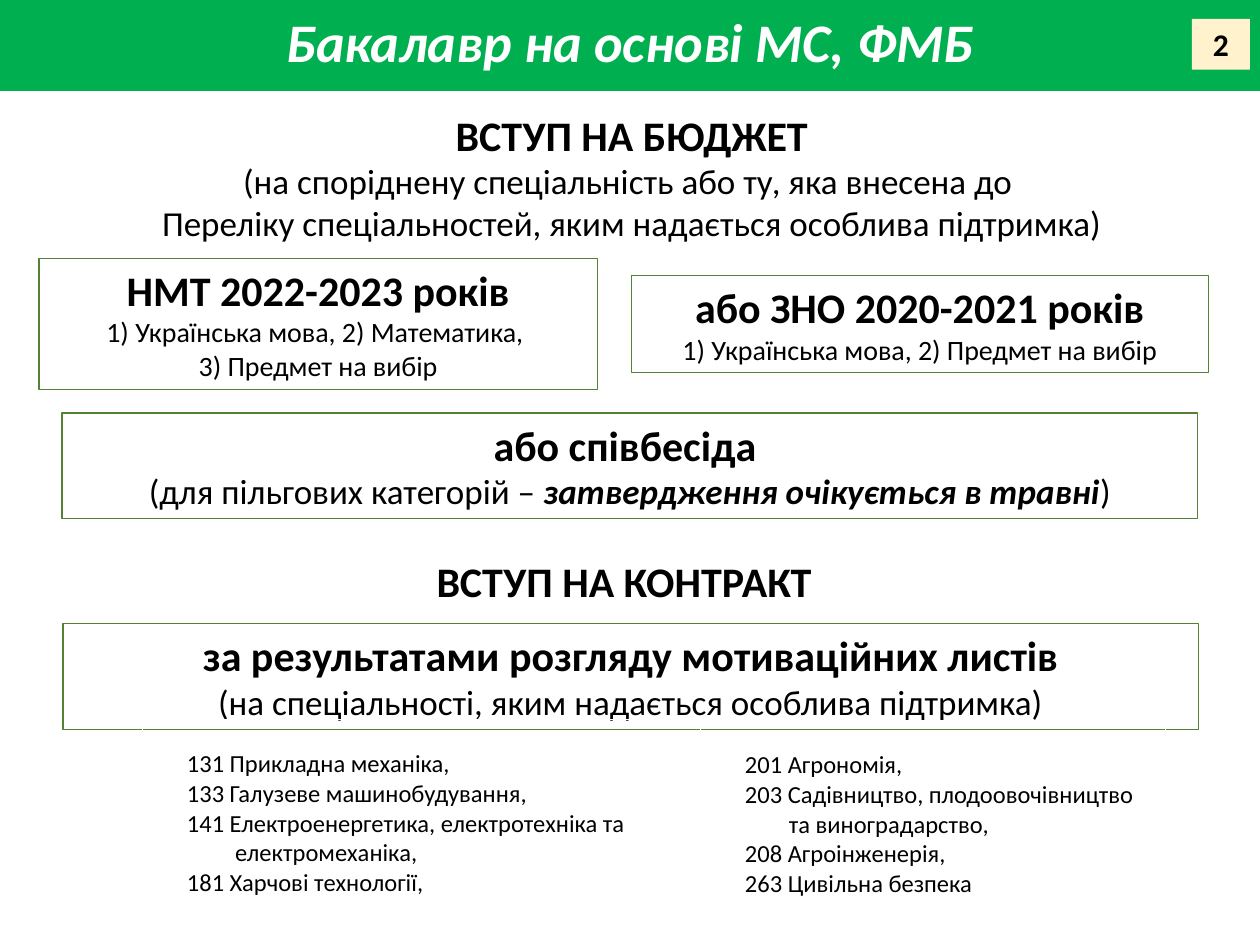
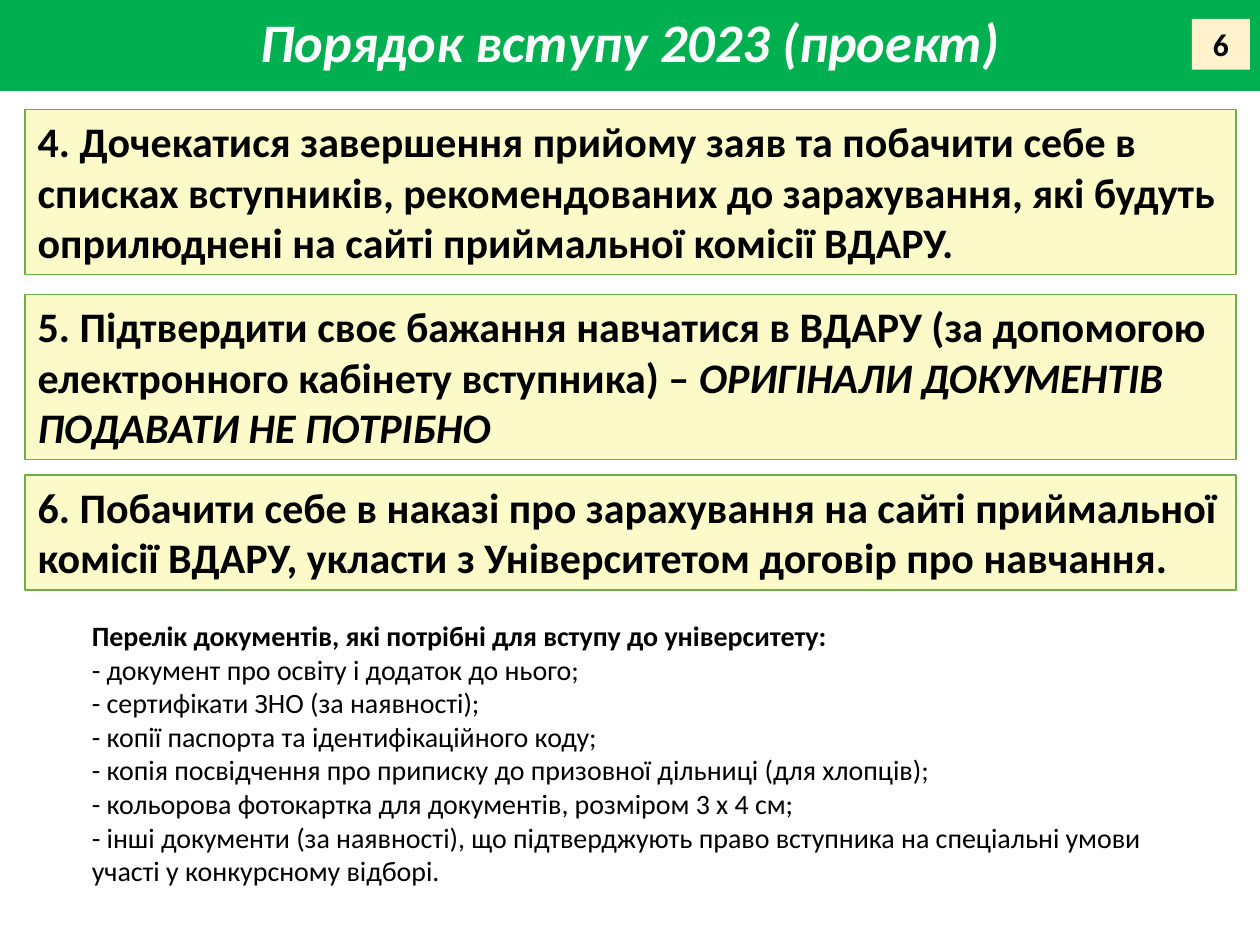
from collections import namedtuple

from lxml import etree
from pptx import Presentation
from pptx.dml.color import RGBColor
from pptx.enum.shapes import MSO_SHAPE as Shape
from pptx.enum.text import MSO_ANCHOR as Anchor, MSO_AUTO_SIZE as AutoSize, PP_ALIGN as Align
from pptx.oxml.ns import qn
from pptx.util import Pt

FONT = "Calibri"
GREEN = RGBColor(0x00, 0xB0, 0x50)
DARK_GREEN = RGBColor(0x54, 0x82, 0x35)
LEAF_GREEN = RGBColor(0x70, 0xAD, 0x47)
CREAM = RGBColor(0xFF, 0xF2, 0xCC)
PALE_YELLOW = RGBColor(0xFB, 0xFA, 0xC8)
WHITE = RGBColor(0xFF, 0xFF, 0xFF)
BLACK = RGBColor(0x00, 0x00, 0x00)

Box = namedtuple("Box", "left top width height")
TITLE_BAND = Box(0, -0.5, 720, 52.5)
NUMBER_BADGE = Box(681.1, 10.8, 33.1, 29)

LIST_SIZE = 14
LIST_LINE = 17
LIST_INDENT = 20.4


def write(para, text, size=24, bold=False, italic=False, color=BLACK):
    """Append one formatted span to a paragraph."""
    span = para.add_run()
    span.text = text
    font = span.font
    font.name, font.size = FONT, Pt(size)
    font.bold, font.italic = bold, italic
    font.color.rgb = color


def add_box(page, box, lines, align=Align.CENTER, fill=None, line=None, line_width=0.75):
    """Place a text box; each line is a list of (text, format) spans."""
    place = [Pt(length) for length in box]
    if fill is None and line is None:
        shape = page.shapes.add_textbox(*place)
    else:
        shape = page.shapes.add_shape(Shape.RECTANGLE, *place)
        shape.shadow.inherit = False
        if fill is None:
            shape.fill.background()
        else:
            shape.fill.solid()
            shape.fill.fore_color.rgb = fill
        if line is None:
            shape.line.fill.background()
        else:
            shape.line.color.rgb = line
            shape.line.width = Pt(line_width)
    frame = shape.text_frame
    frame.word_wrap = True
    frame.auto_size = AutoSize.SHAPE_TO_FIT_TEXT
    frame.vertical_anchor = Anchor.TOP
    for index, spans in enumerate(lines):
        para = frame.add_paragraph() if index else frame.paragraphs[0]
        para.alignment = align
        for text, style in spans:
            write(para, text, **style)


def headed(heading, *details, size=20):
    """Lines with a bold heading and plain details below it."""
    return [[(heading, dict(bold=True))]] + [[(text, dict(size=size))] for text in details]


def add_page(deck, title, number):
    page = deck.slides.add_slide(deck.slide_layouts[5])
    band = page.shapes.title
    band.left, band.top, band.width, band.height = (Pt(length) for length in TITLE_BAND)
    band.fill.solid()
    band.fill.fore_color.rgb = GREEN
    frame = band.text_frame
    frame.word_wrap = True
    frame.auto_size = AutoSize.NONE
    frame.vertical_anchor = Anchor.MIDDLE
    frame.margin_left = frame.margin_right = frame.margin_top = frame.margin_bottom = Pt(9.4)
    para = frame.paragraphs[0]
    para.alignment = Align.CENTER
    para.line_spacing = 0.9
    write(para, title, size=31, bold=True, italic=True, color=WHITE)
    add_box(page, NUMBER_BADGE, [[(number, dict(size=18, bold=True))]], fill=CREAM)
    return page


def add_specialities(page, left, top, width, rows, wrap_indent):
    """One-column table; a line starting in lower case continues the one above."""
    height = LIST_LINE * sum(max(len(row), 1) for row in rows)
    table = page.shapes.add_table(
        len(rows), 1, Pt(left), Pt(top), Pt(width), Pt(height)).table
    table.first_row = table.horz_banding = False
    for index, row in enumerate(rows):
        table.rows[index].height = Pt(LIST_LINE * max(len(row), 1))
        cell = table.cell(index, 0)
        cell.fill.background()
        cell.margin_left = cell.margin_right = Pt(5)
        cell.margin_top = cell.margin_bottom = 0
        frame = cell.text_frame
        if not row:
            etree.SubElement(frame.paragraphs[0]._p, qn("a:endParaRPr"), sz=str(LIST_SIZE * 100))
        for position, text in enumerate(row):
            para = frame.add_paragraph() if position else frame.paragraphs[0]
            indent = wrap_indent if text[0].islower() else LIST_INDENT
            para._p.get_or_add_pPr().set("indent", str(Pt(indent)))
            write(para, text, size=LIST_SIZE)


def add_bachelor_page(deck):
    page = add_page(deck, "Бакалавр на основі МС, ФМБ", "2")
    add_box(page, Box(22.3, 59, 677.5, 85), headed(
        "ВСТУП НА БЮДЖЕТ",
        "(на споріднену спеціальність або ту, яка внесена до ",
        "Переліку спеціальностей, яким надається особлива підтримка)"))
    interview = headed("або співбесіда ") + [[
        ("(для пільгових категорій – ", dict(size=20)),
        ("затвердження очікується в травні", dict(size=20, bold=True, italic=True)),
        (")", dict(size=20))]]
    outlined = [
        (Box(22.3, 147.6, 319, 75), headed(
            "НМТ 2022-2023 років", "1) Українська мова, 2) Математика, ",
            "3) Предмет на вибір", size=16)),
        (Box(360.7, 157.5, 329.8, 55.5), headed(
            "або ЗНО 2020-2021 років", "1) Українська мова, 2) Предмет на вибір", size=16)),
        (Box(35.5, 236, 648.7, 60.5), interview),
        (Box(36, 356.4, 648.7, 60.5), headed(
            "за результатами розгляду мотиваційних листів",
            "(на спеціальності, яким надається особлива підтримка)")),
    ]
    for box, lines in outlined:
        add_box(page, box, lines, line=DARK_GREEN)
    add_box(page, Box(159, 314, 395.3, 36), headed("ВСТУП НА КОНТРАКТ"))
    add_specialities(page, 400.3, 411.8, 265.7, [
        [],
        ["201 Агрономія,"],
        ["203 Садівництво, плодоовочівництво", "та виноградарство,"],
        ["208 Агроінженерія,", "263 Цивільна безпека"],
        [],
    ], wrap_indent=45.5)
    add_specialities(page, 81.4, 411.2, 319, [
        [],
        ["131 Прикладна механіка,"],
        ["133 Галузеве машинобудування,"],
        ["141 Електроенергетика, електротехніка та", "електромеханіка,"],
        ["181 Харчові технології,"],
    ], wrap_indent=48)


def add_procedure_page(deck):
    page = add_page(deck, "Порядок вступу 2023 (проект)", "6")
    bold = dict(bold=True)
    steps = [
        (62.6, 94.3, [(
            "4. Дочекатися завершення прийому заяв та побачити себе в списках вступників, "
            "рекомендованих до зарахування, які будуть оприлюднені на сайті приймальної "
            "комісії ВДАРУ.", bold)]),
        (168.3, 94.3, [
            ("5. Підтвердити своє бажання навчатися в ВДАРУ (за допомогою електронного "
             "кабінету вступника) – ", bold),
            ("ОРИГІНАЛИ ДОКУМЕНТІВ ПОДАВАТИ НЕ ПОТРІБНО", dict(bold=True, italic=True))]),
        (271.5, 65.5, [(
            "6. Побачити себе в наказі про зарахування на сайті приймальної комісії ВДАРУ, "
            "укласти з Університетом договір про навчання.", bold)]),
    ]
    for top, height, spans in steps:
        add_box(page, Box(14.4, top, 691.9, height), [spans], align=Align.LEFT,
                fill=PALE_YELLOW, line=LEAF_GREEN, line_width=1)
    documents = [
        "- документ про освіту і додаток до нього;",
        "- сертифікати ЗНО (за наявності);",
        "- копії паспорта та ідентифікаційного коду;",
        "- копія посвідчення про приписку до призовної дільниці (для хлопців);",
        "- кольорова фотокартка для документів, розміром 3 х 4 см;",
        "- інші документи (за наявності), що підтверджують право вступника на спеціальні "
        "умови участі у конкурсному відборі.",
    ]
    heading = ("Перелік документів, які потрібні для вступу до університету:",
               dict(size=16, bold=True))
    add_box(page, Box(45.4, 350, 629.3, 162.7),
            [[heading]] + [[(text, dict(size=16))] for text in documents],
            align=Align.LEFT, fill=WHITE)


def main():
    deck = Presentation()
    deck.slide_width, deck.slide_height = Pt(720), Pt(540)
    add_bachelor_page(deck)
    add_procedure_page(deck)
    deck.save("out.pptx")


if __name__ == "__main__":
    main()
